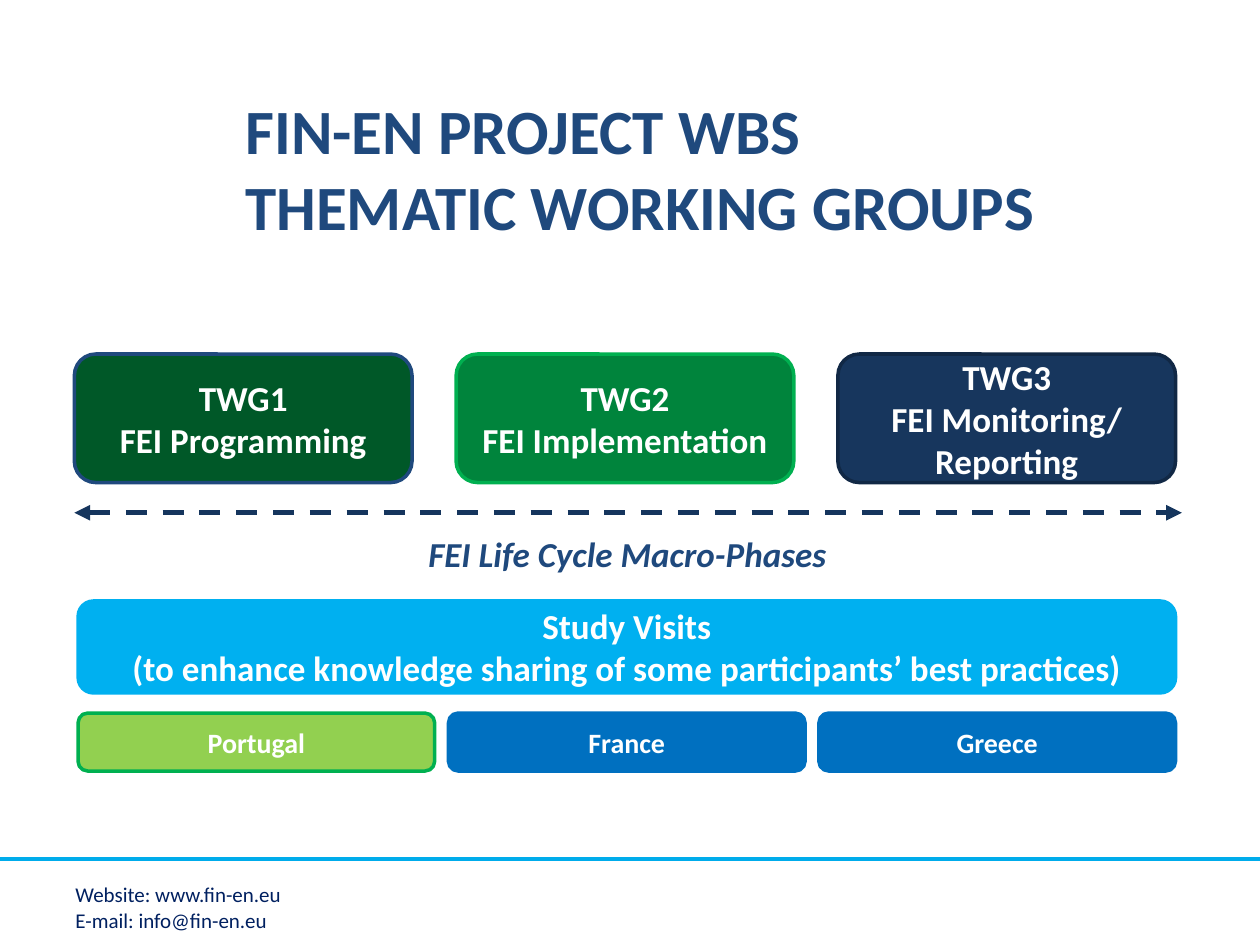
from lxml.etree import SubElement
from pptx import Presentation
from pptx.dml.color import RGBColor
from pptx.enum.dml import MSO_LINE
from pptx.enum.shapes import MSO_CONNECTOR, MSO_SHAPE
from pptx.enum.text import MSO_ANCHOR as Anchor, PP_ALIGN as Align
from pptx.oxml.ns import qn
from pptx.util import Inches, Pt

color = RGBColor.from_string


def write(shape, text, size, ink, align=Align.LEFT, bold=True, italic=False):
    frame = shape.text_frame
    frame.word_wrap = True
    frame.text = text
    for para in frame.paragraphs:
        para.alignment = align
        for span in para.runs:
            span.font.name = "Calibri"
            span.font.size = Pt(size)
            span.font.bold = bold
            span.font.italic = italic
            span.font.color.rgb = color(ink)


deck = Presentation()
deck.slide_width = Inches(10)
deck.slide_height = Inches(7.5)
page = deck.slides.add_slide(deck.slide_layouts[6])

text_boxes = [
    (0.5, 6.95, 2.85, 0.4, "Website: www.fin-en.eu\nE-mail: info@fin-en.eu", 12, "002060", Align.LEFT, False, False),
    (1.85, 0.68, 7.8, 1.5, "FIN-EN PROJECT WBS\vTHEMATIC WORKING GROUPS", 36, "1F497D", Align.LEFT, True, False),
    (2.98, 4.18, 4, 0.46, "FEI Life Cycle Macro-Phases", 20, "1F497D", Align.CENTER, True, True),
]
for left, top, width, height, *style in text_boxes:
    box = page.shapes.add_textbox(Inches(left), Inches(top), Inches(width), Inches(height))
    write(box, *style)

groups = [
    ("TWG1\nFEI Programming", "005828", "1F497D"),
    ("TWG2\nFEI Implementation", "00843C", "00B050"),
    ("TWG3\nFEI Monitoring/ Reporting", "17365D", "112845"),
]
countries = [
    ("Portugal", "92D050", "00B050"),
    ("France", "0070C0", "0070C0"),
    ("Greece", "0070C0", "0070C0"),
]
visits = [(
    "Study Visits\n(to enhance knowledge sharing of some participants’ best practices)",
    "00B0F0", "00B0F0",
)]
rows = [
    (groups, 0.59, 2.81, 2.68, 1.02, 3.03, 20),
    (visits, 0.62, 4.77, 8.71, 0.73, 0, 20),
    (countries, 0.62, 5.66, 2.83, 0.46, 2.94, 16),
]
for cards, left, top, width, height, step, size in rows:
    for index, (text, fill, outline) in enumerate(cards):
        card = page.shapes.add_shape(
            MSO_SHAPE.ROUNDED_RECTANGLE,
            Inches(left + index * step), Inches(top), Inches(width), Inches(height),
        )
        card.shadow.inherit = False
        card.fill.solid()
        card.fill.fore_color.rgb = color(fill)
        card.line.color.rgb = color(outline)
        card.line.width = Pt(2)
        card.text_frame.vertical_anchor = Anchor.MIDDLE
        write(card, text, size, "FFFFFF", Align.CENTER)

lines = [
    (0, 10, 6.82, "00ACEB", 2.25, False),
    (0.59, 9.38, 4.07, "15355D", 3, True),
]
for start, end, top, ink, weight, is_arrow in lines:
    rule = page.shapes.add_connector(
        MSO_CONNECTOR.STRAIGHT, Inches(start), Inches(top), Inches(end), Inches(top)
    )
    rule.line.color.rgb = color(ink)
    rule.line.width = Pt(weight)
    if is_arrow:
        rule.line.dash_style = MSO_LINE.DASH
        for tag in ("a:headEnd", "a:tailEnd"):
            SubElement(rule.line._get_or_add_ln(), qn(tag), type="triangle")
    SubElement(rule._element.spPr, qn("a:effectLst"))

deck.save("out.pptx")
